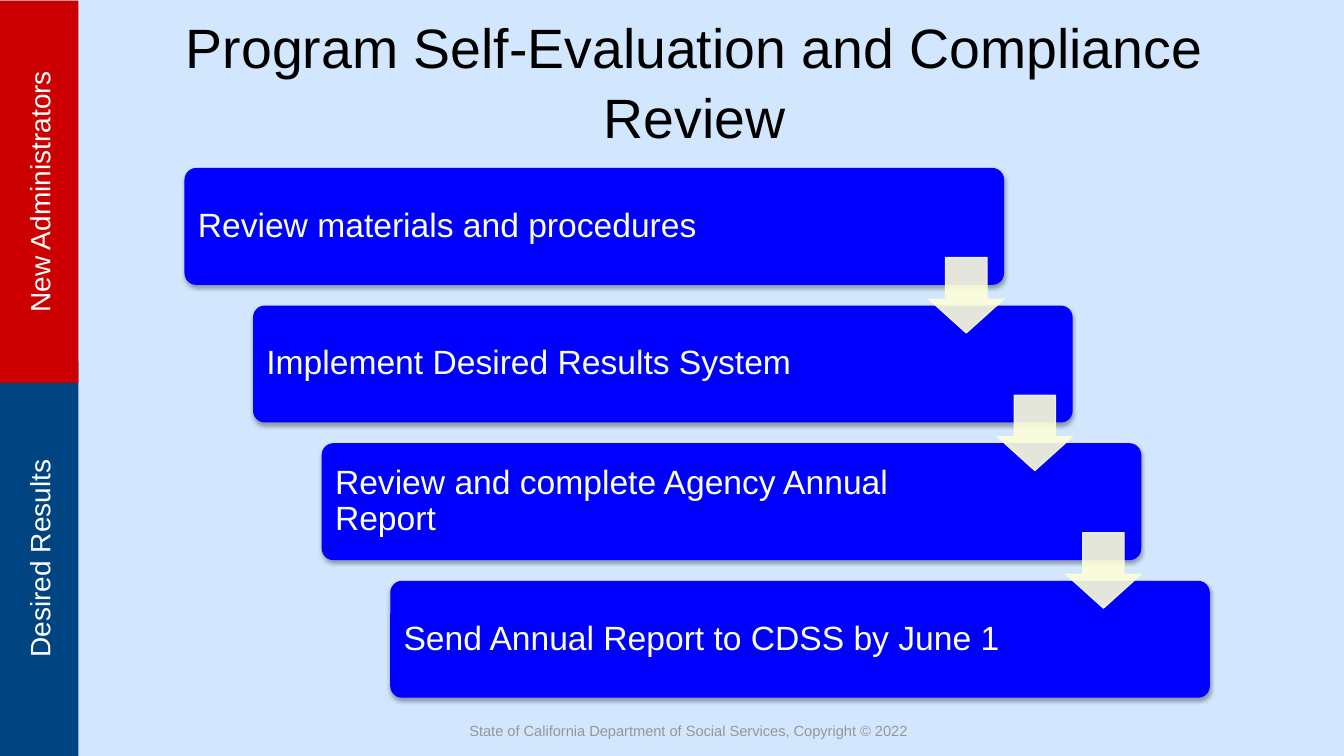
from dataclasses import dataclass

from lxml.etree import SubElement
from pptx import Presentation
from pptx.dml.color import RGBColor as RGB
from pptx.enum.shapes import MSO_SHAPE as SHAPE
from pptx.enum.text import MSO_ANCHOR as ANCHOR, MSO_AUTO_SIZE as AUTO, PP_ALIGN as ALIGN
from pptx.oxml.ns import qn
from pptx.util import Pt

TITLE = "Program Self-Evaluation and Compliance Review"
STEPS = [
    "Review materials and procedures",
    "Implement Desired Results System",
    "Review and complete Agency Annual Report",
    "Send Annual Report to CDSS by June 1",
]
COPYRIGHT = "State of California Department of Social Services, Copyright © 2022"


@dataclass(frozen=True)
class Theme:
    """Colours, font and type sizes of the slide."""
    font: str = "Arial"
    background: str = "D2E7FE"
    desired_results: str = "014482"
    administrators: str = "CC0000"
    band_text: str = "FFFFFF"
    title: str = "000000"
    step: str = "0000FF"
    step_text: str = "FBFFE8"
    arrow: str = "FDFFD9"
    shadow: str = "000000"
    copyright: str = "969696"
    title_size: float = 39.6
    step_size: float = 24
    band_size: float = 20
    copyright_size: float = 10.5


THEME = Theme()
BANDS = [
    ("Desired Results", THEME.desired_results, 399, 282),
    ("New Administrators", THEME.administrators, 137, 273),
]
BAND_WIDTH = 56
STEP_LEFT, STEP_TOP, STEP_WIDTH, STEP_HEIGHT = 131.8, 120, 585.4, 83.5
SHIFT_RIGHT, SHIFT_DOWN = 49, 98.3
ARROW = 54


def box(left, top, width, height):
    """Convert a rectangle in points to slide lengths."""
    return Pt(left), Pt(top), Pt(width), Pt(height)


def write(holder, words, size, colour, align=ALIGN.CENTER, spacing=None, wrap=True):
    """Put one formatted paragraph in a shape."""
    frame = holder.text_frame
    frame.text = words
    frame.auto_size = AUTO.NONE
    frame.word_wrap = wrap
    frame.vertical_anchor = ANCHOR.MIDDLE
    paragraph = frame.paragraphs[0]
    paragraph.alignment = align
    paragraph.line_spacing = spacing
    for run in paragraph.runs:
        run.font.name = THEME.font
        run.font.size = Pt(size)
        run.font.color.rgb = RGB.from_string(colour)
    return frame


def block(slide, kind, place, colour):
    """Add a flat filled shape without outline."""
    shape = slide.shapes.add_shape(kind, *place)
    shape.shadow.inherit = False
    shape.fill.solid()
    shape.fill.fore_color.rgb = RGB.from_string(colour)
    shape.line.fill.background()
    return shape


def add_shadow(shape):
    """Give a shape a soft shadow straight below."""
    effects = shape.element.spPr.find(qn("a:effectLst"))
    shadow = SubElement(effects, qn("a:outerShdw"), blurRad=str(Pt(3.1)),
                        dist=str(Pt(1.8)), dir="5400000", rotWithShape="0")
    colour = SubElement(shadow, qn("a:srgbClr"), val=THEME.shadow)
    SubElement(colour, qn("a:alpha"), val="35000")


def add_band(slide, words, colour, middle, length):
    """Add a side band that reads upwards."""
    place = box((BAND_WIDTH - length) / 2, middle - BAND_WIDTH / 2, length, BAND_WIDTH)
    band = block(slide, SHAPE.RECTANGLE, place, colour)
    band.rotation = 270
    write(band, words, THEME.band_size, THEME.band_text, wrap=False)


def add_step(slide, words, left, top):
    """Add one step of the staircase."""
    step = block(slide, SHAPE.ROUNDED_RECTANGLE,
                 box(left, top, STEP_WIDTH, STEP_HEIGHT), THEME.step)
    step.adjustments[0] = 0.1
    add_shadow(step)
    frame = write(step, words, THEME.step_size, THEME.step_text, ALIGN.LEFT, 0.9)
    frame.margin_left = Pt(7.2)
    frame.margin_right = Pt(110)


def add_arrow(slide, left, top):
    """Add a translucent arrow from a step to the next."""
    gap_middle = top + (STEP_HEIGHT + SHIFT_DOWN) / 2
    place = box(left + STEP_WIDTH - ARROW, gap_middle - ARROW / 2, ARROW, ARROW)
    arrow = block(slide, SHAPE.DOWN_ARROW, place, THEME.arrow)
    arrow.adjustments[0] = 0.55
    arrow.adjustments[1] = 0.45
    arrow.line.color.rgb = RGB.from_string(THEME.arrow)
    arrow.line.width = Pt(0.75)
    for colour in arrow.element.spPr.iter(qn("a:srgbClr")):
        SubElement(colour, qn("a:alpha"), val="90000")


def main():
    """Build and save the slide."""
    deck = Presentation()
    deck.slide_width, deck.slide_height = Pt(960), Pt(540)
    slide = deck.slides.add_slide(deck.slide_layouts[5])
    slide.background.fill.solid()
    slide.background.fill.fore_color.rgb = RGB.from_string(THEME.background)

    for band in BANDS:
        add_band(slide, *band)

    title = slide.shapes.title
    title.left, title.top, title.width, title.height = box(88, 12, 816, 90)
    write(title, TITLE, THEME.title_size, THEME.title, spacing=1.05)

    corners = [(STEP_LEFT + i * SHIFT_RIGHT, STEP_TOP + i * SHIFT_DOWN)
               for i in range(len(STEPS))]
    for words, corner in zip(STEPS, corners):
        add_step(slide, words, *corner)
    for corner in corners[:-1]:
        add_arrow(slide, *corner)

    notice = slide.shapes.add_textbox(*box(318, 510, 348, 24))
    write(notice, COPYRIGHT, THEME.copyright_size, THEME.copyright)
    deck.save("out.pptx")


if __name__ == "__main__":
    main()
